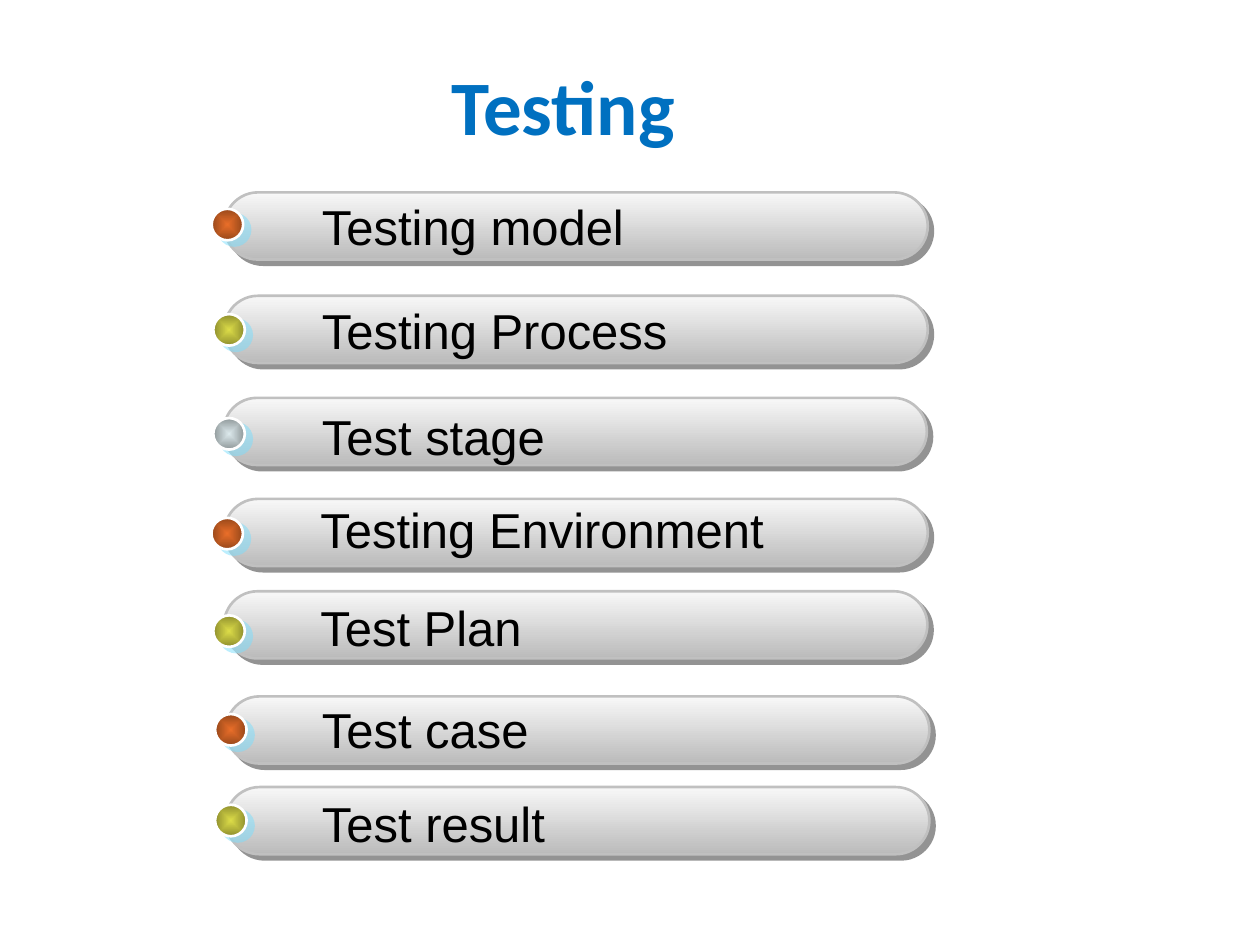
import pptx
import pptx.dml.color
import pptx.enum.shapes
import pptx.enum.text
import pptx.oxml
import pptx.oxml.ns
import pptx.util

SHAPE = pptx.enum.shapes.MSO_SHAPE
ALIGN = pptx.enum.text.PP_ALIGN
ANCHOR = pptx.enum.text.MSO_ANCHOR
AUTO = pptx.enum.text.MSO_AUTO_SIZE
NS = pptx.oxml.ns.nsdecls("a")

COLUMNS, ROWS = 100, 75

ORANGE = ("E96E29", "96471A")
OLIVE = ("DCDC48", "8E8E2E")
SILVER = ("DCE9EC", "8E9799")

# text, dot colours, bar left, bar top, dot left, dot top, text left, text top, text width
ITEMS = [
    ("Testing model", ORANGE, 17.8, 15.27, 16.8, 16.57, 24.57, 15.1, 26.3),
    ("Testing Process", OLIVE, 17.8, 23.48, 16.93, 24.93, 24.57, 23.35, 29.8),
    ("Test stage", SILVER, 17.73, 31.58, 16.93, 33.18, 24.57, 31.8, 19.9),
    ("Testing Environment", ORANGE, 17.8, 39.6, 16.78, 41.1, 24.45, 39.15, 37.7),
    ("Test Plan", OLIVE, 17.77, 46.93, 16.93, 48.84, 24.45, 46.9, 18.2),
    ("Test case", ORANGE, 17.93, 55.27, 17.07, 56.67, 24.57, 55, 18.6),
    ("Test result", OLIVE, 17.93, 62.47, 17.07, 63.87, 24.57, 62.5, 19.9),
]


def rgb(value):
    return pptx.dml.color.RGBColor.from_string(value)


def write(tf, text, size=28, font="Arial", color="000000", bold=False, align=ALIGN.LEFT):
    p = tf.paragraphs[0]
    p.alignment = align
    r = p.add_run()
    r.text = text
    r.font.size = pptx.util.Pt(size)
    r.font.name = font
    r.font.bold = bold
    r.font.color.rgb = rgb(color)


class Deck:
    def __init__(self, width, height):
        self.prs = pptx.Presentation()
        self.prs.slide_width = pptx.util.Inches(width)
        self.prs.slide_height = pptx.util.Inches(height)
        self.s = self.prs.slides.add_slide(self.prs.slide_layouts[6])

    def place(self, left, top, width, height):
        """Turn grid columns and rows into slide lengths."""
        col = self.prs.slide_width / COLUMNS
        row = self.prs.slide_height / ROWS
        return [round(n) for n in (left * col, top * row, width * col, height * row)]

    def title(self, text, *box):
        tf = self.s.shapes.add_textbox(*self.place(*box)).text_frame
        tf.word_wrap = True
        tf.vertical_anchor = ANCHOR.MIDDLE
        tf.margin_left = pptx.util.Inches(0.65)
        write(tf, text, size=44, font="Calibri", color="0070C0", bold=True, align=ALIGN.CENTER)

    def label(self, text, *box):
        tf = self.s.shapes.add_textbox(*self.place(*box)).text_frame
        tf.word_wrap = False
        tf.auto_size = AUTO.SHAPE_TO_FIT_TEXT
        write(tf, text)

    def glossy(self, kind, box, colors, line, shadow, distance, angle):
        """Add a shape with a two-colour gradient and a hard, half-clear shadow."""
        sp = self.s.shapes.add_shape(kind, *self.place(*box))
        sp.fill.gradient()
        for stop, color in zip(sp.fill.gradient_stops, colors):
            stop.color.rgb = rgb(color)
        sp.line.color.rgb = rgb(line)
        sp.line.width = pptx.util.Pt(1.5)
        sp.shadow.inherit = False
        effects = sp._element.spPr.find(pptx.oxml.ns.qn("a:effectLst"))
        effects.append(pptx.oxml.parse_xml(
            f'<a:outerShdw {NS} dist="{pptx.util.Pt(distance)}" dir="{angle * 60000}" '
            f'algn="ctr" rotWithShape="0"><a:srgbClr val="{shadow}">'
            '<a:alpha val="50000"/></a:srgbClr></a:outerShdw>'))
        return sp

    def bar(self, left, top):
        sp = self.glossy(SHAPE.ROUNDED_RECTANGLE, (left, top, 55.83, 5.33),
                         ("F8F8F8", "BBBBBB"), "C0C0C0", "292929", 4.2, 45)
        sp.adjustments[0] = 0.5
        sp.fill.gradient_angle = 270

    def dot(self, colors, left, top):
        sp = self.glossy(SHAPE.OVAL, (left, top, 2.5, 2.5), colors, "FFFFFF", "7BDEFD", 5, 37)
        linear = sp._element.spPr.find(".//" + pptx.oxml.ns.qn("a:lin"))
        linear.getparent().replace(linear, pptx.oxml.parse_xml(
            f'<a:path {NS} path="shape">'
            '<a:fillToRect l="50000" t="50000" r="50000" b="50000"/></a:path>'))


def main():
    deck = Deck(10, 7.5)
    deck.title("Testing", 7.5, 4.2, 68.9, 8.3)
    for text, colors, bar_x, bar_y, dot_x, dot_y, text_x, text_y, width in ITEMS:
        deck.bar(bar_x, bar_y)
        deck.dot(colors, dot_x, dot_y)
        deck.label(text, text_x, text_y, width, 5.7)
    deck.prs.save("out.pptx")


if __name__ == "__main__":
    main()
